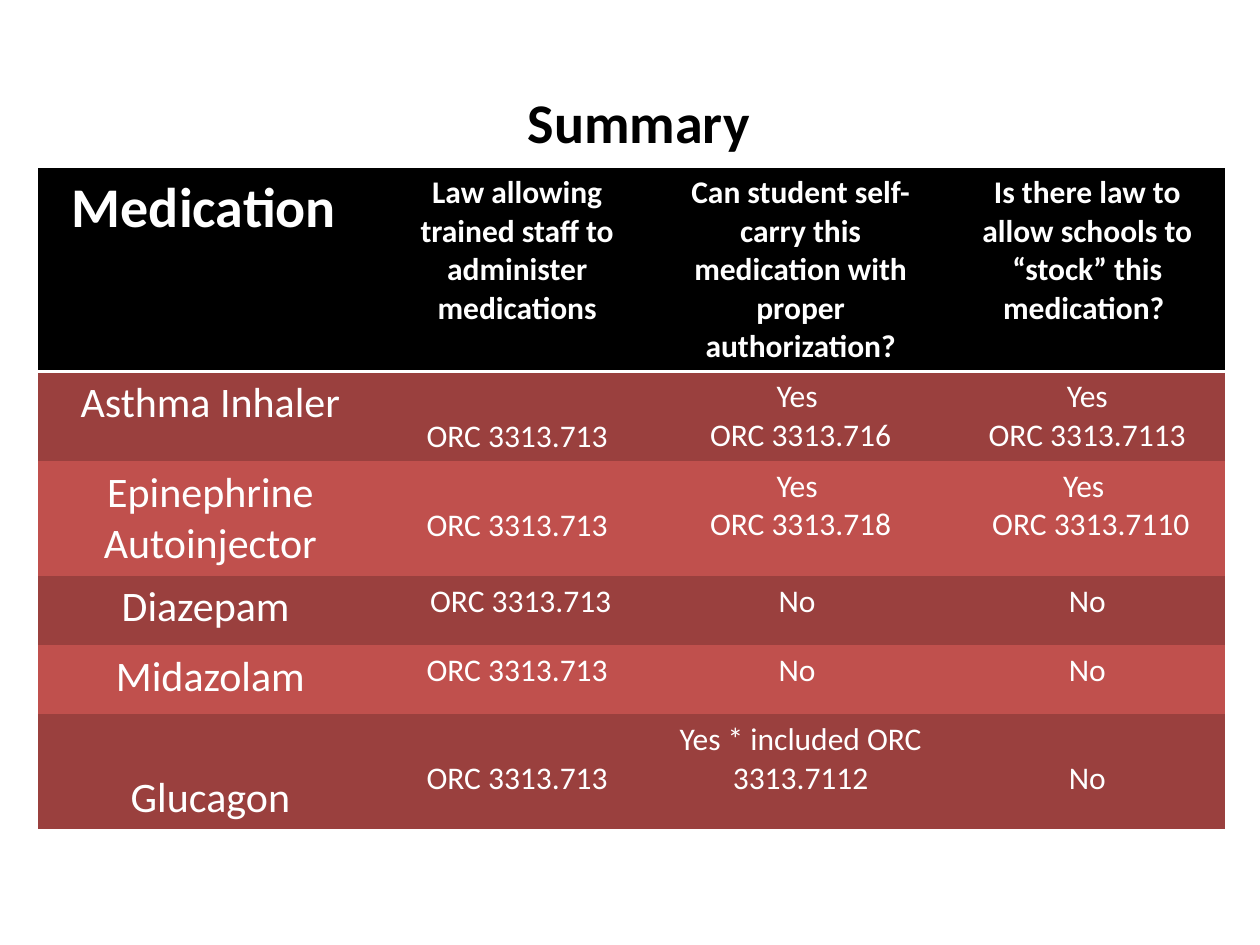
from lxml import etree
from pptx import Presentation
from pptx.dml.color import RGBColor
from pptx.enum.text import MSO_ANCHOR, PP_ALIGN
from pptx.oxml import parse_xml
from pptx.oxml.ns import nsdecls, qn
from pptx.util import Inches, Pt

NO_STYLE_NO_GRID = "{2D5ABB26-0587-4C30-8999-92F81FD0307C}"
BLACK, WHITE = "000000", "FFFFFF"
DARK_RED, LIGHT_RED = "9A403E", "C0504D"
PADDING = 0.05
LINE_HEIGHT = {18: 0.31, 24: 0.41}


def format_text(text_frame, size, color, bold):
    for paragraph in text_frame.paragraphs:
        paragraph.alignment = PP_ALIGN.CENTER
        for run in paragraph.runs:
            run.font.name = "Calibri"
            run.font.size = Pt(size)
            run.font.bold = bold
            run.font.color.rgb = RGBColor.from_string(color)


def add_bottom_border(cell, color, width):
    border = parse_xml(
        f'<a:lnB {nsdecls("a")} w="{Pt(width)}"><a:solidFill>'
        f'<a:srgbClr val="{color}"/></a:solidFill></a:lnB>'
    )
    cell._tc.get_or_add_tcPr().insert(0, border)


presentation = Presentation()
presentation.slide_width = Inches(10)
presentation.slide_height = Inches(7.5)
slide = presentation.slides.add_slide(presentation.slide_layouts[6])

title = slide.shapes.add_textbox(Inches(0.3), Inches(0.5), Inches(9.54), Inches(0.93))
title.text_frame.word_wrap = True
title.text_frame.vertical_anchor = MSO_ANCHOR.MIDDLE
title.text_frame.text = "Summary"
format_text(title.text_frame, 32, BLACK, True)

rows = [
    ["Medication ", "Law allowing trained staff to administer medications",
     "Can student self-carry this medication with proper authorization?",
     "Is there law to allow schools to “stock” this medication? "],
    ["Asthma Inhaler", "ORC 3313.713", "Yes \nORC 3313.716", "Yes\nORC 3313.7113"],
    ["Epinephrine Autoinjector", "ORC 3313.713", "Yes \n ORC 3313.718 ",
     "Yes \n ORC 3313.7110"],
    ["Diazepam ", " ORC 3313.713", "No ", "No"],
    ["Midazolam", "ORC 3313.713", "No ", "No"],
    ["Glucagon", "ORC 3313.713", "Yes * included ORC 3313.7112", "No"],
]
column_widths = [2.74, 2.13, 2.37, 2.18]
row_heights = [1.62, 0.71, 0.91, 0.55, 0.55, 0.91]
# Cells (row, column) whose text starts one line lower
lowered_cells = {(1, 1), (2, 1), (5, 0), (5, 1), (5, 3)}

table_frame = slide.shapes.add_table(
    len(rows), len(column_widths), Inches(0.3), Inches(1.33),
    Inches(sum(column_widths)), Inches(sum(row_heights)),
)
table = table_frame.table
table.first_row = True
table.horz_banding = False
table_frame.element.find(".//" + qn("a:tableStyleId")).text = NO_STYLE_NO_GRID

for column, width in zip(table.columns, column_widths):
    column.width = Inches(width)

for row_index, texts in enumerate(rows):
    table.rows[row_index].height = Inches(row_heights[row_index])
    is_header = row_index == 0
    fill_color = BLACK if is_header else (LIGHT_RED, DARK_RED)[row_index % 2]
    for column_index, text in enumerate(texts):
        cell = table.cell(row_index, column_index)
        size = 18 if column_index else (32 if is_header else 24)
        lowered = (row_index, column_index) in lowered_cells
        cell.margin_top = Inches(PADDING + (LINE_HEIGHT[size] if lowered else 0))
        cell.margin_bottom = Inches(PADDING)
        cell.text_frame.text = text
        format_text(cell.text_frame, size, WHITE, is_header)
        cell.fill.solid()
        cell.fill.fore_color.rgb = RGBColor.from_string(fill_color)
        if is_header:
            add_bottom_border(cell, WHITE, 2)

presentation.save("out.pptx")
